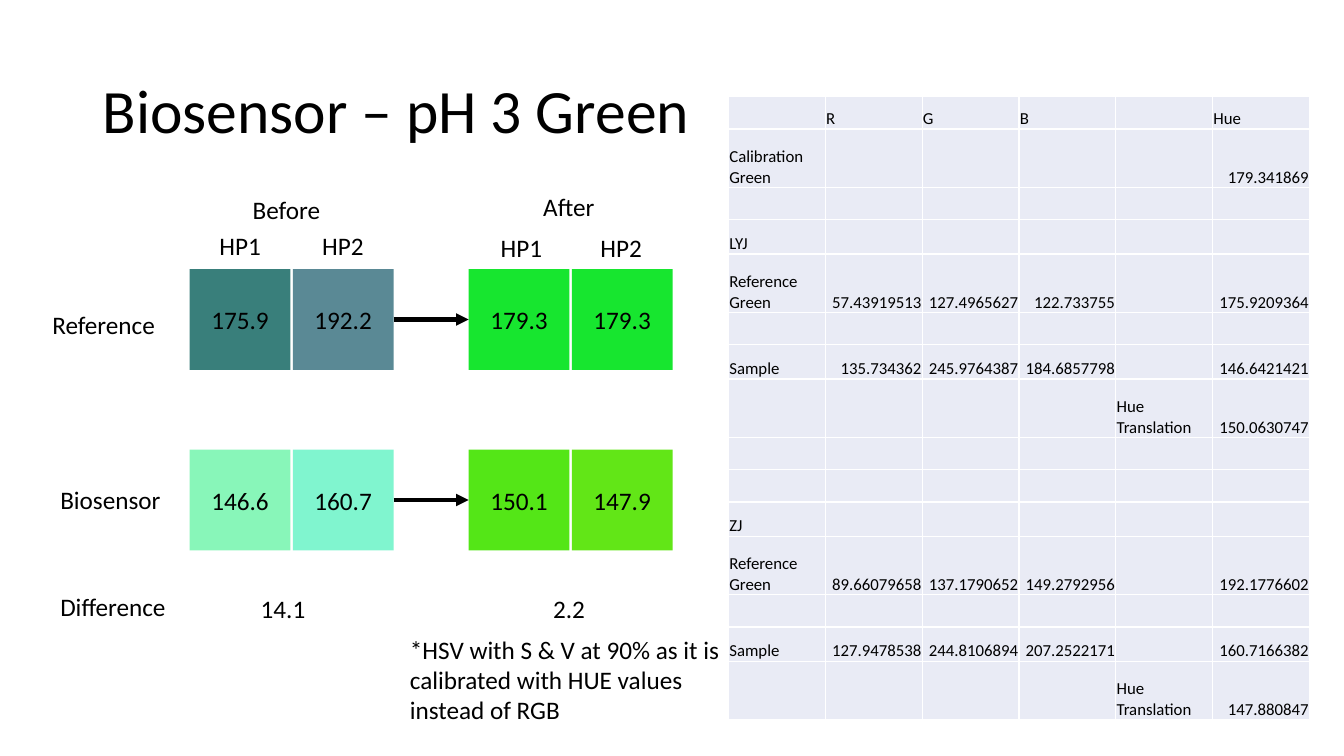
from dataclasses import dataclass

from lxml import etree
from pptx import Presentation
from pptx import util as u
from pptx.dml.color import RGBColor
from pptx.enum import shapes, text
from pptx.oxml import ns


@dataclass(frozen=True)
class Theme:
    font: str = "Calibri"
    ink: str = "000000"
    cell_fill: str = "E9EBF5"
    cell_border: str = "FFFFFF"
    title_size: int = 44
    body_size: int = 18
    table_size: int = 12


@dataclass(frozen=True)
class Label:
    words: str
    left: float
    top: float
    width: float
    height: float = 1.02
    wrap: bool = False


@dataclass(frozen=True)
class HueRow:
    """Hue squares of one specimen: two before and two after calibration."""
    top: float
    hues: tuple[str, ...]
    fills: tuple[str, ...]


THEME = Theme()
SQUARE = 2.54
SQUARE_LEFTS = [group + i * 2.6 for group in (4.78, 11.81) for i in range(2)]
HUE_ROWS = [
    HueRow(6.78, ("175.9", "192.2", "179.3", "179.3"),
           ("397F7B", "5A8995", "17E62F", "17E62F")),
    HueRow(11.33, ("146.6", "160.7", "150.1", "147.9"),
           ("88F6B9", "80F5CF", "54E617", "62E617")),
]
TITLE = Label("Biosensor – pH 3 Green", 2.34, 1.02, 29.21, 3.68, wrap=True)
LABELS = [
    Label("Before", 6.12, 4.78, 2.24),
    Label("After", 13.44, 4.7, 1.83),
    Label("HP1", 5.28, 5.69, 1.57),
    Label("HP2", 7.87, 5.69, 1.57),
    Label("HP1", 12.37, 5.74, 1.57),
    Label("HP2", 14.88, 5.74, 1.57),
    Label("Reference", 1.07, 7.67, 3.12),
    Label("Biosensor", 1.27, 12.07, 3.07),
    Label("Difference", 1.27, 14.78, 3.2),
    Label("14.1", 6.32, 14.83, 1.65),
    Label("2.2", 13.69, 14.83, 1.32),
    Label("*HSV with S & V at 90% as it is calibrated with HUE values instead of RGB",
          10.08, 15.85, 8.53, 2.57, wrap=True),
]
BLANK = ("",) * 6
READINGS = [
    ("", "R", "G", "B", "", "Hue"),
    ("Calibration Green", "", "", "", "", "179.341869"),
    BLANK,
    ("LYJ", "", "", "", "", ""),
    ("Reference Green", "57.43919513", "127.4965627", "122.733755", "", "175.9209364"),
    BLANK,
    ("Sample", "135.734362", "245.9764387", "184.6857798", "", "146.6421421"),
    ("", "", "", "", "Hue Translation", "150.0630747"),
    BLANK,
    BLANK,
    ("ZJ", "", "", "", "", ""),
    ("Reference Green", "89.66079658", "137.1790652", "149.2792956", "", "192.1776602"),
    BLANK,
    ("Sample", "127.9478538", "244.8106894", "207.2522171", "", "160.7166382"),
    ("", "", "", "", "Hue Translation", "147.880847"),
]


def set_format(target, values: dict) -> None:
    for name, value in values.items():
        setattr(target, name, value)


def write(paragraph, words: str, size: int, align=text.PP_ALIGN.LEFT) -> None:
    paragraph.alignment = align
    run = paragraph.add_run()
    run.text = words
    set_format(run.font, {"name": THEME.font, "size": u.Pt(size)})
    run.font.color.rgb = RGBColor.from_string(THEME.ink)


def add_label(slide, label: Label, size: int = THEME.body_size):
    box = slide.shapes.add_textbox(u.Cm(label.left), u.Cm(label.top),
                                   u.Cm(label.width), u.Cm(label.height))
    set_format(box.text_frame, {"word_wrap": label.wrap,
                                "auto_size": text.MSO_AUTO_SIZE.SHAPE_TO_FIT_TEXT})
    write(box.text_frame.paragraphs[0], label.words, size)
    return box


def add_title(slide) -> None:
    frame = add_label(slide, TITLE, THEME.title_size).text_frame
    set_format(frame, {"auto_size": text.MSO_AUTO_SIZE.NONE,
                       "vertical_anchor": text.MSO_ANCHOR.MIDDLE})
    frame.paragraphs[0].line_spacing = 0.9


def add_square(slide, left: float, top: float, hue: str, fill: str):
    square = slide.shapes.add_shape(shapes.MSO_SHAPE.RECTANGLE, u.Cm(left), u.Cm(top),
                                    u.Cm(SQUARE), u.Cm(SQUARE))
    square.shadow.inherit = False
    square.fill.solid()
    square.fill.fore_color.rgb = RGBColor.from_string(fill)
    square.line.fill.background()
    square.text_frame.vertical_anchor = text.MSO_ANCHOR.MIDDLE
    write(square.text_frame.paragraphs[0], hue, THEME.body_size, text.PP_ALIGN.CENTER)
    return square


def add_arrow(slide, before, after) -> None:
    arrow = slide.shapes.add_connector(shapes.MSO_CONNECTOR.STRAIGHT, 0, 0, 0, 0)
    arrow.begin_connect(before, 3)
    arrow.end_connect(after, 1)
    arrow.line.width = u.Pt(3)
    arrow.line.color.rgb = RGBColor.from_string(THEME.ink)
    etree.SubElement(arrow.line._get_or_add_ln(), ns.qn("a:tailEnd"), type="triangle")
    etree.SubElement(arrow._element.spPr, ns.qn("a:effectLst"))


def add_hue_row(slide, row: HueRow) -> None:
    squares = [add_square(slide, left, row.top, hue, fill)
               for left, hue, fill in zip(SQUARE_LEFTS, row.hues, row.fills)]
    add_arrow(slide, squares[1], squares[2])


def row_height(reading: tuple[str, ...]) -> float:
    """Taller for a label that wraps onto two lines."""
    if any(" " in words for words in reading):
        return 1.48
    return 0.86 if reading[0] else 0.81


def format_cell(cell, words: str) -> None:
    set_format(cell, {"margin_left": u.Cm(0.02), "margin_right": u.Cm(0.02),
                      "margin_top": u.Cm(0.02), "margin_bottom": 0,
                      "vertical_anchor": text.MSO_ANCHOR.BOTTOM})
    properties = cell._tc.get_or_add_tcPr()
    for side in ("lnL", "lnR", "lnT", "lnB"):
        border = etree.SubElement(properties, ns.qn(f"a:{side}"), w=str(u.Pt(1)))
        paint = etree.SubElement(border, ns.qn("a:solidFill"))
        etree.SubElement(paint, ns.qn("a:srgbClr"), val=THEME.cell_border)
    cell.fill.solid()
    cell.fill.fore_color.rgb = RGBColor.from_string(THEME.cell_fill)
    paragraph = cell.text_frame.paragraphs[0]
    if words:
        is_number = words[0].isdigit()
        write(paragraph, words, THEME.table_size,
              text.PP_ALIGN.RIGHT if is_number else text.PP_ALIGN.LEFT)
    else:
        etree.SubElement(paragraph._p, ns.qn("a:endParaRPr"),
                         sz=str(THEME.table_size * 100))


def add_readings(slide) -> None:
    heights = [row_height(reading) for reading in READINGS]
    table = slide.shapes.add_table(len(READINGS), len(BLANK), u.Cm(18.36), u.Cm(2.44),
                                   u.Cm(14.64), u.Cm(sum(heights))).table
    set_format(table, {"first_row": False, "horz_banding": False})
    for row, height, reading in zip(table.rows, heights, READINGS):
        row.height = u.Cm(height)
        for cell, words in zip(row.cells, reading):
            format_cell(cell, words)


def main() -> None:
    deck = Presentation()
    set_format(deck, {"slide_width": u.Cm(33.87), "slide_height": u.Cm(19.05)})
    slide = deck.slides.add_slide(deck.slide_layouts[6])
    add_title(slide)
    for row in HUE_ROWS:
        add_hue_row(slide, row)
    for label in LABELS:
        add_label(slide, label)
    add_readings(slide)
    deck.save("out.pptx")


if __name__ == "__main__":
    main()
